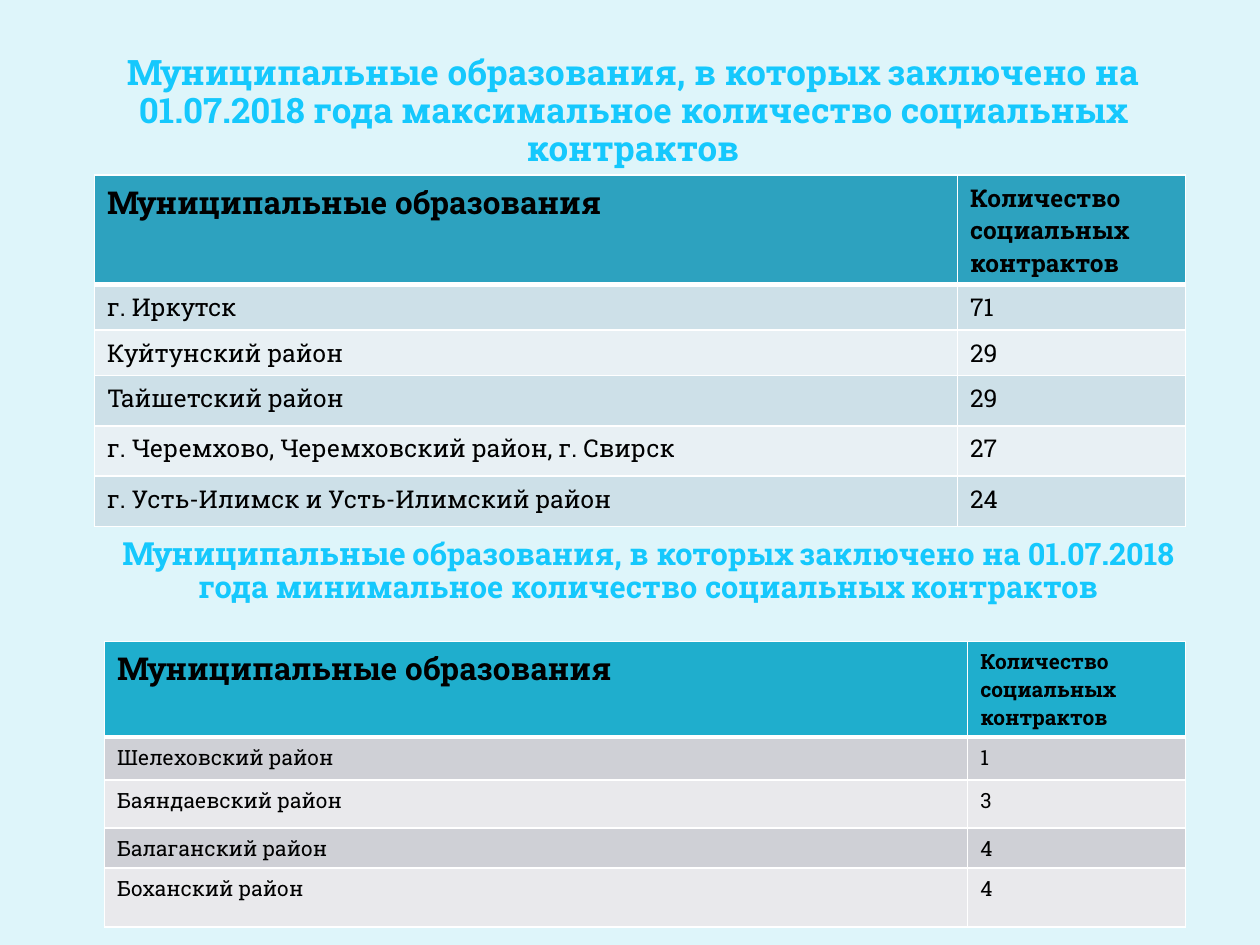
from pptx import Presentation
from pptx.dml.color import RGBColor as RGB
from pptx.enum.text import MSO_ANCHOR as Anchor, PP_ALIGN as Align
from pptx.oxml import parse_xml
from pptx.oxml.ns import nsdecls
from pptx.util import Inches, Pt

FONT = "Roboto Slab"
COLORS = {
    "back": "DEF5FA", "title": "15C8FD", "gap": "8C8C8C",
    "text": "000000", "line": "FFFFFF",
    "teal": "2DA2BF", "teal odd": "CDE0E8", "teal even": "E8F0F4",
    "cyan": "1FAECD", "gray odd": "CFD0D6", "gray even": "E9E9EC",
}
HEADS = ["Муниципальные образования", "Количество социальных контрактов"]
MOST = [
    ("г. Иркутск", "71"),
    ("Куйтунский район", "29"),
    ("Тайшетский район", "29"),
    ("г. Черемхово, Черемховский район, г. Свирск", "27"),
    ("г. Усть-Илимск и Усть-Илимский район", "24"),
]
LEAST = [
    ("Шелеховский район", "1"),
    ("Баяндаевский район", "3"),
    ("Балаганский район", "4"),
    ("Боханский район", "4"),
]


def color(name):
    return RGB.from_string(COLORS[name])


def add_run(para, text, size, bold, tint="text"):
    run = para.add_run()
    run.text = text
    font = run.font
    font.name, font.size, font.bold = FONT, Pt(size), bold
    font.color.rgb = color(tint)


def add_title(slide, box, runs, right, anchor):
    """Centred heading; each run is (text, size, bold, tint)."""
    frame = slide.shapes.add_textbox(*map(Inches, box)).text_frame
    frame.word_wrap = True
    frame.vertical_anchor = anchor
    frame.margin_right = Inches(right)
    para = frame.paragraphs[0]
    para.alignment = Align.CENTER
    para.line_spacing = 0.9
    para._p.get_or_add_pPr().set("marL", str(Inches(0.06)))
    for run in runs:
        add_run(para, *run)


def add_borders(cell, head, first):
    """White lines; the rule between head and body is thick."""
    widths = {"L": 1, "R": 1, "T": 3 if first else 1, "B": 3 if head else 1}
    props = cell._tc.get_or_add_tcPr()
    for spot, (side, width) in enumerate(widths.items()):
        props.insert(spot, parse_xml(
            f'<a:ln{side} {nsdecls("a")} w="{Pt(width)}"><a:solidFill>'
            f'<a:srgbClr val="{COLORS["line"]}"/></a:solidFill></a:ln{side}>'))


def add_grid(slide, box, split, heights, rows, sizes, fills):
    """Table; sizes are for the two heads and the body, fills head, odd, even."""
    left, top, width = box
    rows = [HEADS, *rows]
    table = slide.shapes.add_table(
        len(rows), 2, Inches(left), Inches(top),
        Inches(width), Inches(sum(heights))).table
    for col, span in zip(table.columns, (split, width - split)):
        col.width = Inches(span)
    for i, (row, height) in enumerate(zip(rows, heights)):
        table.rows[i].height = Inches(height)
        head = i == 0
        fill = fills[0] if head else fills[2 - i % 2]
        for j, text in enumerate(row):
            cell = table.cell(i, j)
            cell.fill.solid()
            cell.fill.fore_color.rgb = color(fill)
            add_borders(cell, head, i == 1)
            add_run(cell.text_frame.paragraphs[0], text,
                    sizes[j] if head else sizes[2], head)


def main():
    deck = Presentation()
    deck.slide_width, deck.slide_height = Inches(10), Inches(7.5)
    slide = deck.slides.add_slide(deck.slide_layouts[6])
    back = slide.background.fill
    back.solid()
    back.fore_color.rgb = color("back")

    add_title(slide, (0.75, 0.21, 8.5, 1.18), [
        ("Муниципальные образования, в которых заключено на 01.07.2018 года "
         "максимальное количество социальных контрактов", 20, True, "title"),
    ], 0.11, Anchor.BOTTOM)
    add_grid(slide, (0.75, 1.39, 8.66), 6.85,
             [0.87, 0.36, 0.36, 0.4, 0.4, 0.4], MOST, (18, 14, 14),
             ("teal", "teal odd", "teal even"))

    add_title(slide, (0.67, 4.22, 8.94, 0.63), [
        ("Муниципальные", 18.2, True, "title"),
        (" ", 13.2, False, "gap"),
        ("образования, в которых заключено на 01.07.2018 года "
         "минимальное количество социальных контрактов", 17.6, True, "title"),
    ], 0.14, Anchor.TOP)
    add_grid(slide, (0.83, 5.09, 8.58), 6.85,
             [0.76, 0.34, 0.38, 0.32, 0.47], LEAST, (18, 12, 12),
             ("cyan", "gray odd", "gray even"))
    deck.save("out.pptx")


if __name__ == "__main__":
    main()
